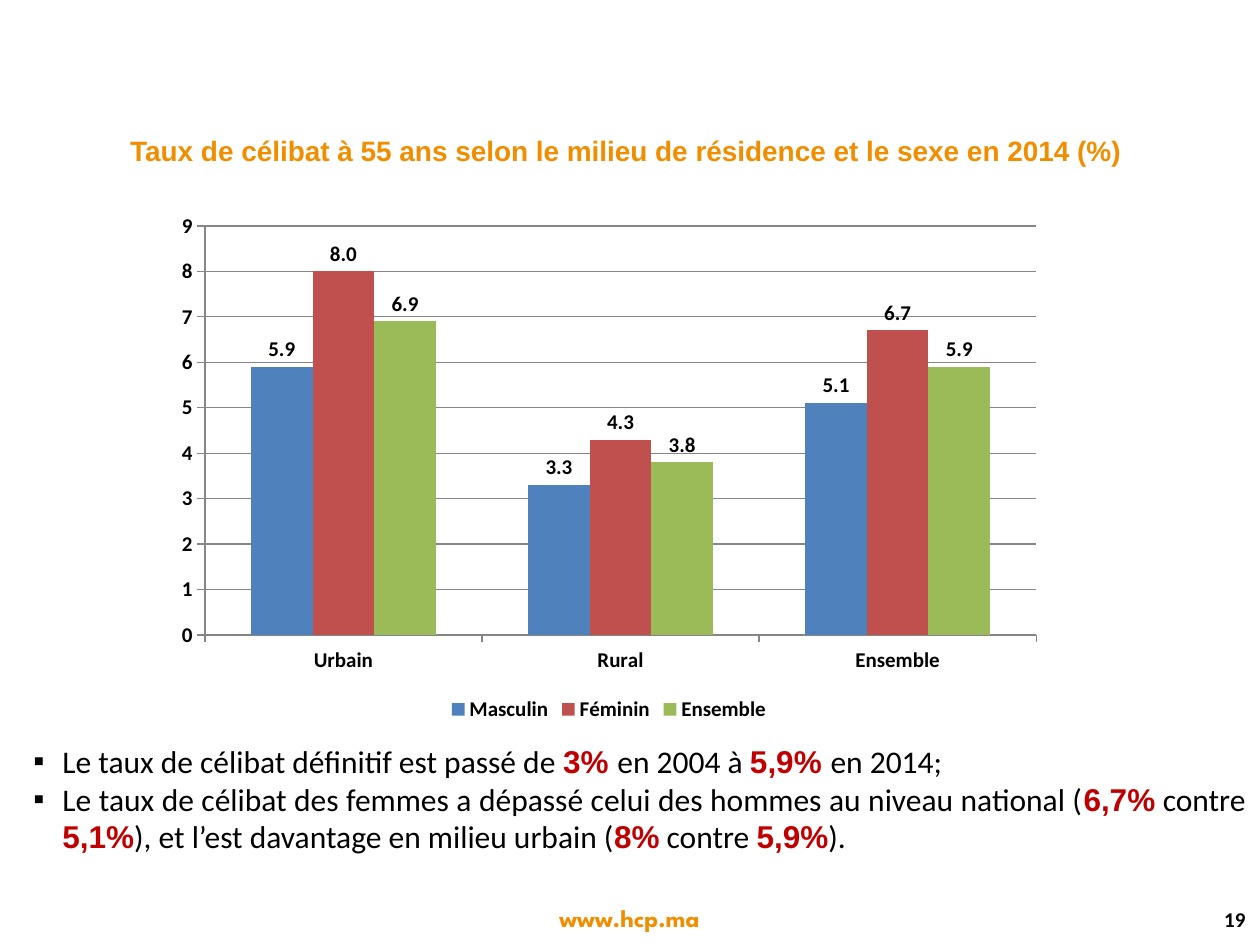
from dataclasses import dataclass
from lxml.etree import SubElement
from pptx import Presentation
from pptx.chart.data import CategoryChartData
from pptx.dml.color import RGBColor
from pptx.enum.chart import XL_CHART_TYPE as Kind, XL_LABEL_POSITION as Spot
from pptx.enum.chart import XL_LEGEND_POSITION as Side, XL_TICK_MARK as Tick
from pptx.enum.text import MSO_ANCHOR as Anchor, MSO_AUTO_SIZE as Fit, PP_ALIGN as Align
from pptx.oxml.ns import qn
from pptx.util import Emu, Pt


@dataclass(frozen=True)
class Theme:
    body: str = "Calibri"
    head: str = "Arial"
    brand: str = "League Spartan"
    ink: str = "000000"
    gold: str = "F18E00"
    red: str = "C00000"
    grid: str = "868686"
    small: int = 12
    site: int = 14
    title: int = 16
    text: int = 18


T = Theme()
TITLE = "Taux de célibat à 55 ans selon le milieu de résidence et le sexe en 2014 (%)"
SITE, PAGE = "www.hcp.ma", "19"
CATS = ["Urbain", "Rural", "Ensemble"]
SERIES = [
    ("Masculin", (5.9, 3.3, 5.1), "4F81BD"),
    ("Féminin", (8.0, 4.3, 6.7), "C0504D"),
    ("Ensemble", (6.9, 3.8, 5.9), "9BBB59"),
]
# Plain and highlighted pieces alternate, starting with plain.
POINTS = [
    ["Le taux de célibat définitif est passé de ", "3% ", "en 2004 à ", "5,9% ", "en 2014;"],
    ["Le taux de célibat des femmes a dépassé celui des hommes au niveau national (",
     "6,7%", " contre ", "5,1%", "), et l’est davantage en milieu urbain (",
     "8%", " contre ", "5,9%", ")."],
]
BOXES = {  # left, top, width, height in px
    "title": (-4, 127, 1260, 47),
    "chart": (164, 203, 890, 524),
    "points": (21, 735, 1237, 127),
    "site": (481, 897, 297, 42),
    "page": (1066, 897, 192, 44),
}
HANG = 29


def px(n):
    return Emu(round(n * 914400 / 126))


def box(name):
    return [px(n) for n in BOXES[name]]


def style(font, face, size, color, bold=True):
    font.name, font.size, font.bold = face, Pt(size), bold
    font.color.rgb = RGBColor.from_string(color)


def setup(frame, anchor):
    frame.word_wrap = True
    frame.auto_size = Fit.NONE
    frame.vertical_anchor = anchor


def label(shape, text, align, anchor, *look):
    frame = shape.text_frame
    frame.text = text
    setup(frame, anchor)
    para = frame.paragraphs[0]
    para.alignment = align
    style(para.runs[0].font, *look)


def bullet(para):
    props = para._p.get_or_add_pPr()
    props.set("marL", str(px(HANG)))
    props.set("indent", str(-px(HANG)))
    SubElement(props, qn("a:buFont")).set("typeface", T.head)
    SubElement(props, qn("a:buChar")).set("char", "▪")


def add_points(slide):
    frame = slide.shapes.add_textbox(*box("points")).text_frame
    setup(frame, Anchor.MIDDLE)
    for i, parts in enumerate(POINTS):
        para = frame.add_paragraph() if i else frame.paragraphs[0]
        bullet(para)
        para.alignment = Align.JUSTIFY
        for j, part in enumerate(parts):
            run = para.add_run()
            run.text = part
            face, color = (T.head, T.red) if j % 2 else (T.body, T.ink)
            style(run.font, face, T.text, color, bool(j % 2))


def add_bars(slide):
    data = CategoryChartData(number_format="0.0")
    data.categories = CATS
    for name, vals, _ in SERIES:
        data.add_series(name, vals)
    chart = slide.shapes.add_chart(Kind.COLUMN_CLUSTERED, *box("chart"), data).chart
    style(chart.font, T.body, T.small, T.ink)
    chart.has_title = False
    chart.has_legend = True
    chart.legend.position = Side.BOTTOM
    chart.legend.include_in_layout = False

    plot = chart.plots[0]
    plot.gap_width, plot.overlap = 150, 0
    plot.vary_by_categories = False
    for series, (_, _, color) in zip(plot.series, SERIES):
        series.format.fill.solid()
        series.format.fill.fore_color.rgb = RGBColor.from_string(color)
        marks = series.data_labels
        marks.show_value = True
        marks.position = Spot.OUTSIDE_END
        marks.number_format, marks.number_format_is_linked = "0.0", False
        style(marks.font, T.body, T.small, T.ink)

    axis = chart.value_axis
    axis.minimum_scale, axis.maximum_scale, axis.major_unit = 0, 9, 1
    axis.has_major_gridlines = True
    axis.tick_labels.number_format = "0"
    axis.tick_labels.number_format_is_linked = False
    for part in (axis, chart.category_axis, axis.major_gridlines):
        part.format.line.color.rgb = RGBColor.from_string(T.grid)
        part.format.line.width = Pt(0.75)
    for part in (axis, chart.category_axis):
        part.major_tick_mark = Tick.OUTSIDE
        style(part.tick_labels.font, T.body, T.small, T.ink)


def main():
    deck = Presentation()
    deck.slide_width, deck.slide_height = px(1260), px(945)
    slide = deck.slides.add_slide(deck.slide_layouts[5])
    shapes = slide.shapes
    title = shapes.title
    title.left, title.top, title.width, title.height = box("title")
    label(title, TITLE, Align.CENTER, Anchor.MIDDLE, T.head, T.title, T.gold)
    add_bars(slide)
    add_points(slide)
    label(shapes.add_textbox(*box("site")), SITE, Align.CENTER, Anchor.TOP,
          T.brand, T.site, T.gold)
    label(shapes.add_textbox(*box("page")), PAGE, Align.RIGHT, Anchor.MIDDLE,
          T.body, T.small, T.ink)
    deck.save("out.pptx")


if __name__ == "__main__":
    main()
